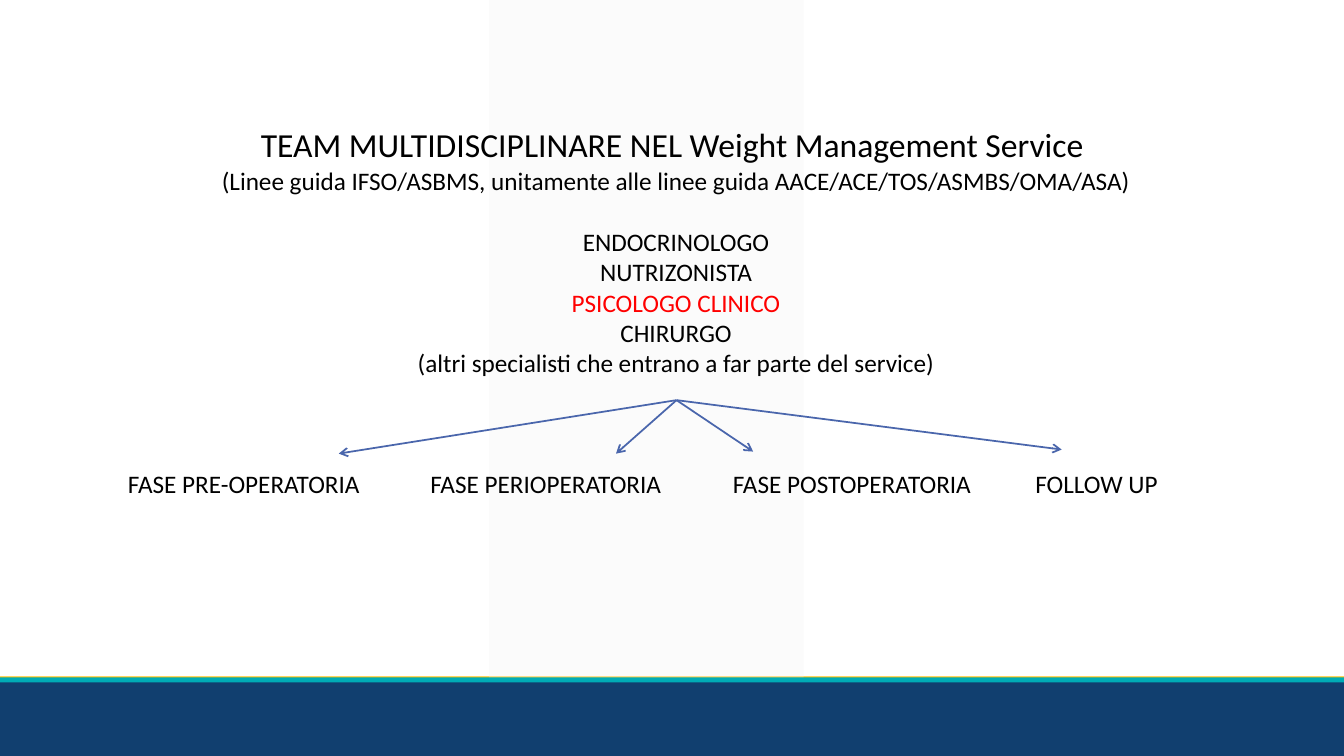
from dataclasses import dataclass

from lxml import etree
from pptx import Presentation
from pptx.dml.color import RGBColor
from pptx.enum import shapes, text
from pptx.oxml.ns import qn
from pptx.util import Inches, Pt


@dataclass(frozen=True)
class Theme:
    font: str = "Calibri"
    title_size: int = 24
    body_size: int = 18
    ink: str = "000000"
    accent: str = "FF0000"
    arrow: str = "4A66AC"
    gold: str = "FFC000"
    teal: str = "00ACB6"
    navy: str = "113F6F"
    panel: str = "F2F2F2"


THEME = Theme()
WIDTH, HEIGHT = 13.33, 7.5
TEXT_LEFT, TEXT_WIDTH = 1.17, 11.07

TITLE = "TEAM MULTIDISCIPLINARE NEL Weight Management Service "
GUIDELINES = "(Linee guida IFSO/ASBMS, unitamente alle linee guida AACE/ACE/TOS/ASMBS/OMA/ASA)"
PSYCHOLOGIST = "PSICOLOGO CLINICO"
TEAM = [
    "ENDOCRINOLOGO",
    "NUTRIZONISTA",
    PSYCHOLOGIST,
    "CHIRURGO",
    "(altri specialisti che entrano a far parte del service)",
]
PHASES = [
    "FASE PRE-OPERATORIA",
    "FASE PERIOPERATORIA",
    "FASE POSTOPERATORIA",
    "FOLLOW UP",
]
PHASE_STEP = 3
ARROW_START = (6.71, 3.97)
ARROW_ENDS = [(3.36, 4.5), (6.11, 4.5), (7.47, 4.48), (10.53, 4.46)]


def set_all(obj, values):
    for name, value in values.items():
        setattr(obj, name, value)


def add_band(slide, left, top, width, height, color, opacity=100):
    sp = slide.shapes.add_shape(
        shapes.MSO_SHAPE.RECTANGLE,
        Inches(left), Inches(top), Inches(width), Inches(height))
    sp.shadow.inherit = False
    sp.line.fill.background()
    sp.fill.solid()
    sp.fill.fore_color.rgb = RGBColor.from_string(color)
    if opacity < 100:
        clr = sp._element.spPr.find(qn("a:solidFill"))[0]
        etree.SubElement(clr, qn("a:alpha"), val=str(opacity * 1000))


def write_lines(sp, lines, size, align):
    """Fill a text shape with unbulleted lines, one paragraph each."""
    tf = sp.text_frame
    set_all(tf, {
        "word_wrap": True,
        "auto_size": text.MSO_AUTO_SIZE.NONE,
        "vertical_anchor": text.MSO_ANCHOR.TOP,
    })
    tf.text = "\n".join(lines)
    for p in tf.paragraphs:
        pPr = p._p.get_or_add_pPr()
        pPr.set("marL", "0")
        pPr.set("indent", "0")
        etree.SubElement(pPr, qn("a:buNone"))
        set_all(p, {"alignment": align, "line_spacing": 1.0,
                    "space_before": Pt(0), "space_after": Pt(0)})
        for r in p.runs:
            set_all(r.font, {"name": THEME.font, "size": Pt(size)})
            color = THEME.accent if r.text == PSYCHOLOGIST else THEME.ink
            r.font.color.rgb = RGBColor.from_string(color)


def place_placeholder(slide, sp, top, height, lines, size):
    """Move a placeholder in front of the bands and fill it."""
    slide.shapes._spTree.append(sp._element)
    set_all(sp, {"left": Inches(TEXT_LEFT), "top": Inches(top),
                 "width": Inches(TEXT_WIDTH), "height": Inches(height)})
    write_lines(sp, lines, size, text.PP_ALIGN.CENTER)


def add_phase(slide, left, label):
    sp = slide.shapes.add_textbox(
        Inches(left), Inches(4.6), Inches(PHASE_STEP), Inches(0.4))
    write_lines(sp, [label], THEME.body_size, text.PP_ALIGN.LEFT)


def add_arrow(slide, start, end):
    line = slide.shapes.add_connector(
        shapes.MSO_CONNECTOR.STRAIGHT, *map(Inches, start + end))
    line.line.color.rgb = RGBColor.from_string(THEME.arrow)
    line.line.width = Pt(1.25)
    etree.SubElement(line.line._get_or_add_ln(), qn("a:tailEnd"), type="arrow")
    etree.SubElement(line._element.spPr, qn("a:effectLst"))


def main():
    prs = Presentation()
    set_all(prs, {"slide_width": Inches(WIDTH), "slide_height": Inches(HEIGHT)})
    slide = prs.slides.add_slide(prs.slide_layouts[1])

    add_band(slide, 0, 6.71, WIDTH, 0.05, THEME.gold)
    add_band(slide, 0, 6.75, WIDTH, 0.75, THEME.navy)
    add_band(slide, 4.85, 0, 3.12, 6.75, THEME.panel, opacity=30)
    add_band(slide, 0, 6.72, WIDTH, 0.05, THEME.teal)

    place_placeholder(slide, slide.shapes.title, 1.18, 0.5,
                      [TITLE], THEME.title_size)
    body = slide.placeholders[1]
    place_placeholder(slide, body, 1.59, 2.25,
                      [GUIDELINES] + TEAM, THEME.body_size)
    body.text_frame.paragraphs[0].space_after = Pt(22)

    for i, label in enumerate(PHASES):
        add_phase(slide, TEXT_LEFT + i * PHASE_STEP, label)
    for end in ARROW_ENDS:
        add_arrow(slide, ARROW_START, end)

    prs.save("out.pptx")


if __name__ == "__main__":
    main()
